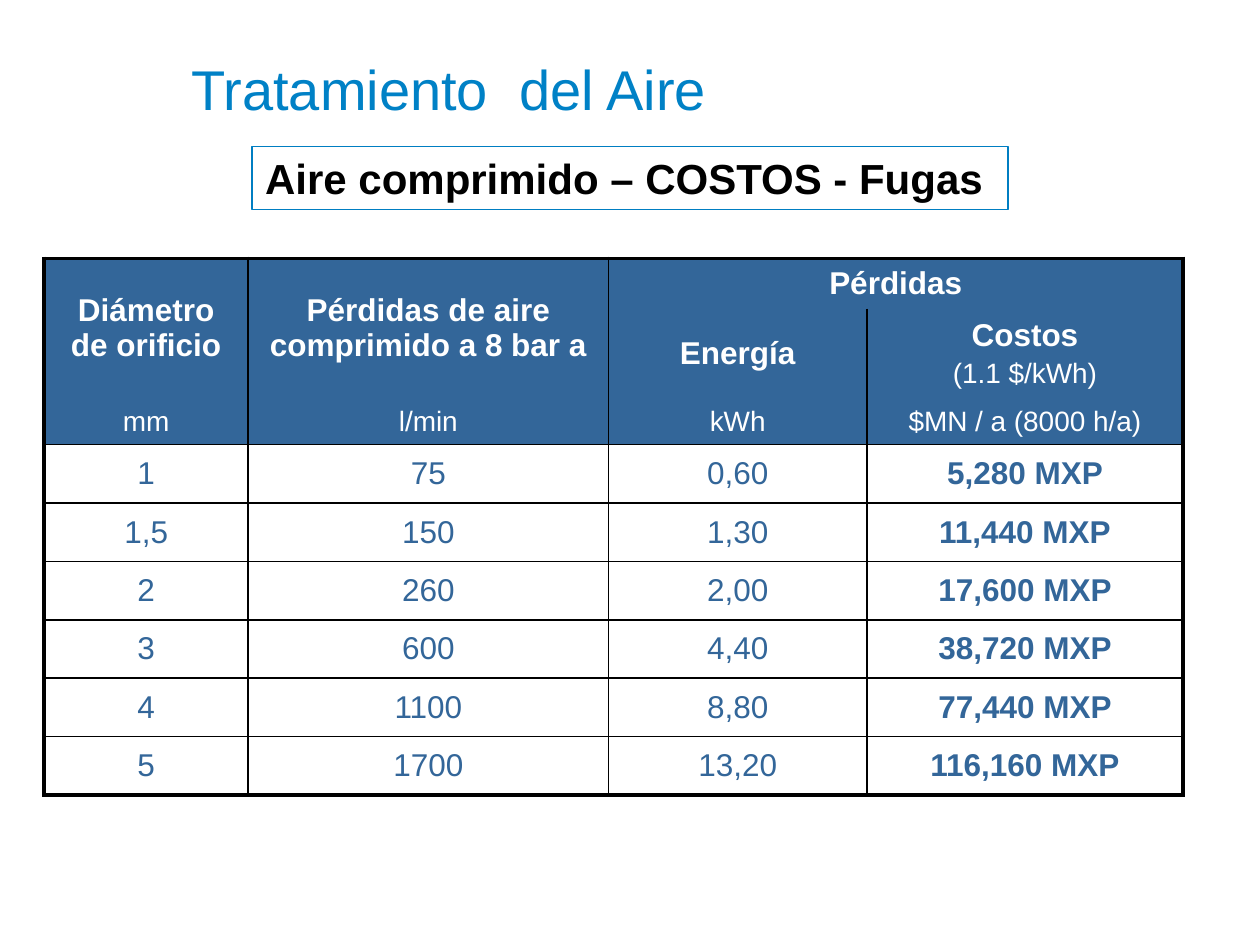
from dataclasses import dataclass

from lxml import etree
from pptx import Presentation
from pptx import util as u
from pptx.dml.color import RGBColor
from pptx.enum import shapes, text
from pptx.oxml import ns


@dataclass(frozen=True)
class Theme:
    font: str = "Arial"
    title: str = "0081C6"
    outline: str = "007EC2"
    header: str = "336699"
    white: str = "FFFFFF"
    black: str = "000000"
    title_size: int = 32
    subtitle_size: int = 24
    table_size: int = 18
    unit_size: int = 16
    thin: float = 1
    thick: float = 2.25


HEADER = [
    ["Diámetro de orificio", "Pérdidas de aire comprimido a 8 bar a", "Pérdidas", ""],
    ["", "", "Energía", "Costos"],
    ["mm", "l/min", "kWh", "$MN / a (8000 h/a)"],
]
TARIFF = "(1.1 $/kWh)"
LEAKS = [
    ["1", "75", "0,60", "5,280 MXP"],
    ["1,5", "150", "1,30", "11,440 MXP"],
    ["2", "260", "2,00", "17,600 MXP"],
    ["3", "600", "4,40", "38,720 MXP"],
    ["4", "1100", "8,80", "77,440 MXP"],
    ["5", "1700", "13,20", "116,160 MXP"],
]
COLUMN_SHARES = [16.2, 28.6, 20.5, 25.1]
ROW_SHARES = [5.33, 9.47, 4.93] + [6.18] * len(LEAKS)
MERGES = [((0, 0), (1, 0)), ((0, 1), (1, 1)), ((0, 2), (0, 3))]


class SlideBuilder:
    """Places elements by percentages of the slide's width and height."""

    def __init__(self, deck, theme):
        self.deck, self.theme = deck, theme
        self.slide = deck.slides.add_slide(deck.slide_layouts[5])

    def across(self, share):
        return int(self.deck.slide_width * share / 100)

    def down(self, share):
        return int(self.deck.slide_height * share / 100)

    def area(self, left, top, width, height):
        return self.across(left), self.down(top), self.across(width), self.down(height)

    def add_text(self, para, words, size, color, bold=False, align=text.PP_ALIGN.CENTER):
        para.alignment = align
        span = para.add_run()
        span.text = words
        span.font.name = self.theme.font
        span.font.size = u.Pt(size)
        span.font.bold = bold
        span.font.color.rgb = RGBColor.from_string(color)

    def title(self, words, *area):
        box = self.slide.shapes.title
        box.left, box.top, box.width, box.height = self.area(*area)
        frame = box.text_frame
        frame.vertical_anchor = text.MSO_ANCHOR.TOP
        frame.margin_top = u.Inches(0.1)
        self.add_text(frame.paragraphs[0], words, self.theme.title_size,
                      self.theme.title, align=text.PP_ALIGN.LEFT)

    def framed_text(self, words, *area):
        box = self.slide.shapes.add_shape(shapes.MSO_SHAPE.RECTANGLE, *self.area(*area))
        box.shadow.inherit = False
        box.fill.solid()
        box.fill.fore_color.rgb = RGBColor.from_string(self.theme.white)
        box.line.color.rgb = RGBColor.from_string(self.theme.outline)
        box.line.width = u.Pt(0.75)
        frame = box.text_frame
        frame.word_wrap = True
        self.add_text(frame.paragraphs[0], words, self.theme.subtitle_size,
                      self.theme.black, bold=True)

    def border(self, cell, side, width):
        """Draws one side of a cell; a width of zero hides it."""
        properties = cell._tc.get_or_add_tcPr()
        line = etree.SubElement(properties, ns.qn(f"a:ln{side}"), w=str(u.Pt(width)))
        if width:
            fill = etree.SubElement(line, ns.qn("a:solidFill"))
            etree.SubElement(fill, ns.qn("a:srgbClr"), val=self.theme.black)
        else:
            etree.SubElement(line, ns.qn("a:noFill"))

    def cell_borders(self, cell, row, column, rows, columns):
        thin, thick = self.theme.thin, self.theme.thick
        last_column = column + (cell.span_width if cell.is_merge_origin else 1)
        inside_merge = row == 0 and column == columns - 1
        left = thick if column == 0 else 0 if inside_merge else thin
        right = thick if last_column == columns else thin
        top = thick if row == 0 else thin if row >= len(HEADER) else 0
        bottom = thick if row == rows - 1 else thin if row >= len(HEADER) - 1 else 0
        for side, width in zip("LRTB", (left, right, top, bottom)):
            self.border(cell, side, width)

    def fill_cell(self, cell, words, row, column):
        theme = self.theme
        cell.vertical_anchor = text.MSO_ANCHOR.MIDDLE
        para = cell.text_frame.paragraphs[0]
        if row >= len(HEADER):
            cell.fill.background()
            self.add_text(para, words, theme.table_size, theme.header, bold=column == 3)
            return
        cell.fill.solid()
        cell.fill.fore_color.rgb = RGBColor.from_string(theme.header)
        if not words:
            return
        is_unit = row == len(HEADER) - 1
        size = theme.unit_size if is_unit else theme.table_size
        self.add_text(para, words, size, theme.white, bold=not is_unit)
        if words == "Costos":
            tariff = cell.text_frame.add_paragraph()
            tariff.space_before = u.Pt(3)
            self.add_text(tariff, TARIFF, theme.unit_size, theme.white)

    def table(self, records, left, top):
        rows, columns = len(records), len(records[0])
        area = self.area(left, top, sum(COLUMN_SHARES), sum(ROW_SHARES))
        table = self.slide.shapes.add_table(rows, columns, *area).table
        table.first_row = table.horz_banding = False
        for column, share in zip(table.columns, COLUMN_SHARES):
            column.width = self.across(share)
        for row, share in zip(table.rows, ROW_SHARES):
            row.height = self.down(share)
        for start, end in MERGES:
            table.cell(*start).merge(table.cell(*end))
        for row, record in enumerate(records):
            for column, words in enumerate(record):
                cell = table.cell(row, column)
                self.cell_borders(cell, row, column, rows, columns)
                self.fill_cell(cell, words, row, column)


def main():
    deck = Presentation()
    deck.slide_width, deck.slide_height = u.Inches(10), u.Inches(7.5)
    page = SlideBuilder(deck, Theme())
    page.title("Tratamiento  del Aire", 14.2, 4.4, 80.8, 16.67)
    page.framed_text("Aire comprimido – COSTOS - Fugas ", 20, 15.47, 60, 6.67)
    page.table(HEADER + LEAKS, 3.5, 27.33)
    deck.save("out.pptx")


if __name__ == "__main__":
    main()
